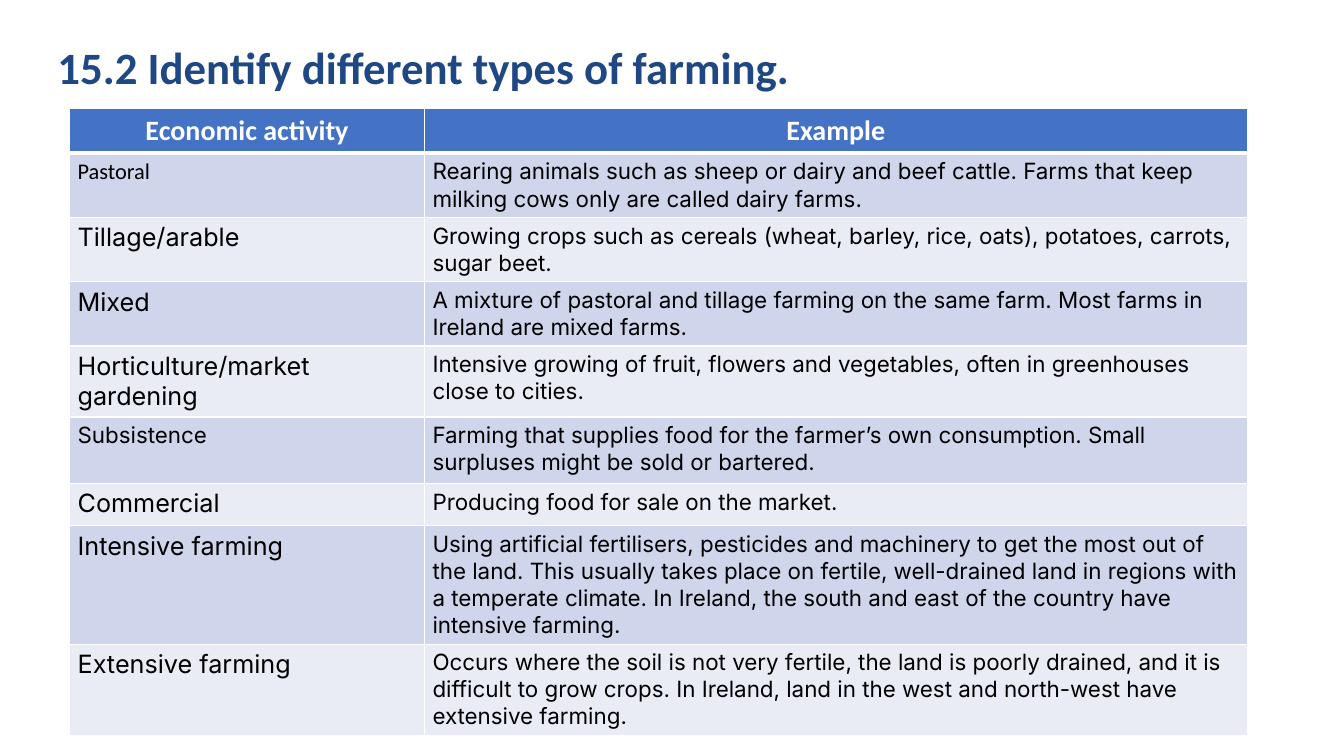
from dataclasses import dataclass

from lxml import etree
from pptx import Presentation
from pptx.dml.color import RGBColor
from pptx.enum import text
from pptx.oxml.ns import qn
from pptx.util import Inches, Pt

TITLE = "15.2 Identify different types of farming."
HEADER = ("Economic activity", "Example")
# (activity, font, size, row height in inches, example)
FARMING_TYPES = [
    ("Pastoral", "Calibri", 16, 0.62,
     "Rearing animals such as sheep or dairy and beef cattle. Farms that keep "
     "milking cows only are called dairy farms."),
    ("Tillage/arable", "Inter", 18, 0.41,
     "Growing crops such as cereals (wheat, barley, rice, oats), potatoes, "
     "carrots, sugar beet."),
    ("Mixed", "Inter", 18, 0.63,
     "A mixture of pastoral and tillage farming on the same farm. Most farms "
     "in Ireland are mixed farms."),
    ("Horticulture/market gardening", "Inter", 18, 0.42,
     "Intensive growing of fruit, flowers and vegetables, often in greenhouses "
     "close to cities."),
    ("Subsistence", "Inter", 16, 0.66,
     "Farming that supplies food for the farmer’s own consumption. Small "
     "surpluses might be sold or bartered."),
    ("Commercial", "Inter", 18, 0.42, "Producing food for sale on the market."),
    ("Intensive farming", "Inter", 18, 0.42,
     "Using artificial fertilisers, pesticides and machinery to get the most "
     "out of the land. This usually takes place on fertile, well-drained land "
     "in regions with a temperate climate. In Ireland, the south and east of "
     "the country have intensive farming."),
    ("Extensive farming", "Inter", 18, 0.42,
     "Occurs where the soil is not very fertile, the land is poorly drained, "
     "and it is difficult to grow crops. In Ireland, land in the west and "
     "north-west have extensive farming."),
]
COLUMN_WIDTHS = (3.52, 8.16)
HEADER_HEIGHT = 0.39


@dataclass(frozen=True)
class Theme:
    heading_font: str = "Calibri"
    body_font: str = "Inter"
    title_size: int = 32
    header_size: int = 20
    body_size: int = 16
    title: str = "1E4783"
    header_fill: str = "4472C4"
    bands: tuple = ("CFD5EA", "E9EBF5")
    white: str = "FFFFFF"
    black: str = "000000"
    rule: int = 1
    header_rule: int = 3


THEME = Theme()


def style(paragraph, font, size, color, bold=False):
    paragraph.font.name = font
    paragraph.font.size = Pt(size)
    paragraph.font.bold = bold
    paragraph.font.color.rgb = RGBColor.from_string(color)


def set_borders(cell, top, bottom):
    properties = cell._tc.get_or_add_tcPr()
    widths = {"a:lnL": THEME.rule, "a:lnR": THEME.rule,
              "a:lnT": top, "a:lnB": bottom}
    for tag, width in widths.items():
        line = etree.SubElement(properties, qn(tag), w=str(Pt(width)))
        fill = etree.SubElement(line, qn("a:solidFill"))
        etree.SubElement(fill, qn("a:srgbClr"), val=THEME.white)


def fill_cell(cell, words, fill, font, size, color, bold=False,
              top=THEME.rule, bottom=THEME.rule):
    set_borders(cell, top, bottom)
    cell.fill.solid()
    cell.fill.fore_color.rgb = RGBColor.from_string(fill)
    cell.margin_left = cell.margin_right = Inches(0.08)
    cell.margin_top = cell.margin_bottom = Inches(0.05)
    cell.text = words
    paragraph = cell.text_frame.paragraphs[0]
    style(paragraph, font, size, color, bold)
    return paragraph


def add_title(slide):
    title = slide.shapes.title
    title.left, title.top = Inches(0.47), Inches(0.39)
    title.width, title.height = Inches(12.32), Inches(0.61)
    frame = title.text_frame
    frame.text = TITLE
    frame.word_wrap = True
    frame.auto_size = text.MSO_AUTO_SIZE.NONE
    frame.vertical_anchor = text.MSO_ANCHOR.MIDDLE
    paragraph = frame.paragraphs[0]
    paragraph.alignment = text.PP_ALIGN.LEFT
    paragraph.line_spacing = 0.9
    properties = paragraph._p.get_or_add_pPr()
    properties.set("marL", str(Inches(1.18)))
    properties.set("indent", str(Inches(-1.18)))
    style(paragraph, THEME.heading_font, THEME.title_size, THEME.title, True)


def add_farming_table(slide):
    heights = [HEADER_HEIGHT] + [row[3] for row in FARMING_TYPES]
    table = slide.shapes.add_table(
        len(heights), len(COLUMN_WIDTHS), Inches(0.69), Inches(1.08),
        Inches(sum(COLUMN_WIDTHS)), Inches(sum(heights))).table
    for column, width in zip(table.columns, COLUMN_WIDTHS):
        column.width = Inches(width)
    for row, height in zip(table.rows, heights):
        row.height = Inches(height)

    for column, words in enumerate(HEADER):
        paragraph = fill_cell(
            table.cell(0, column), words, THEME.header_fill, THEME.heading_font,
            THEME.header_size, THEME.white, True, bottom=THEME.header_rule)
        paragraph.alignment = text.PP_ALIGN.CENTER

    for index, (activity, font, size, _, example) in enumerate(FARMING_TYPES):
        band = THEME.bands[index % 2]
        top = THEME.rule if index else THEME.header_rule
        fill_cell(table.cell(index + 1, 0), activity, band, font, size,
                  THEME.black, top=top)
        fill_cell(table.cell(index + 1, 1), example, band, THEME.body_font,
                  THEME.body_size, THEME.black, top=top)


def main():
    presentation = Presentation()
    presentation.slide_width = Inches(13.33)
    presentation.slide_height = Inches(7.5)
    slide = presentation.slides.add_slide(presentation.slide_layouts[5])
    add_title(slide)
    add_farming_table(slide)
    presentation.save("out.pptx")


if __name__ == "__main__":
    main()
